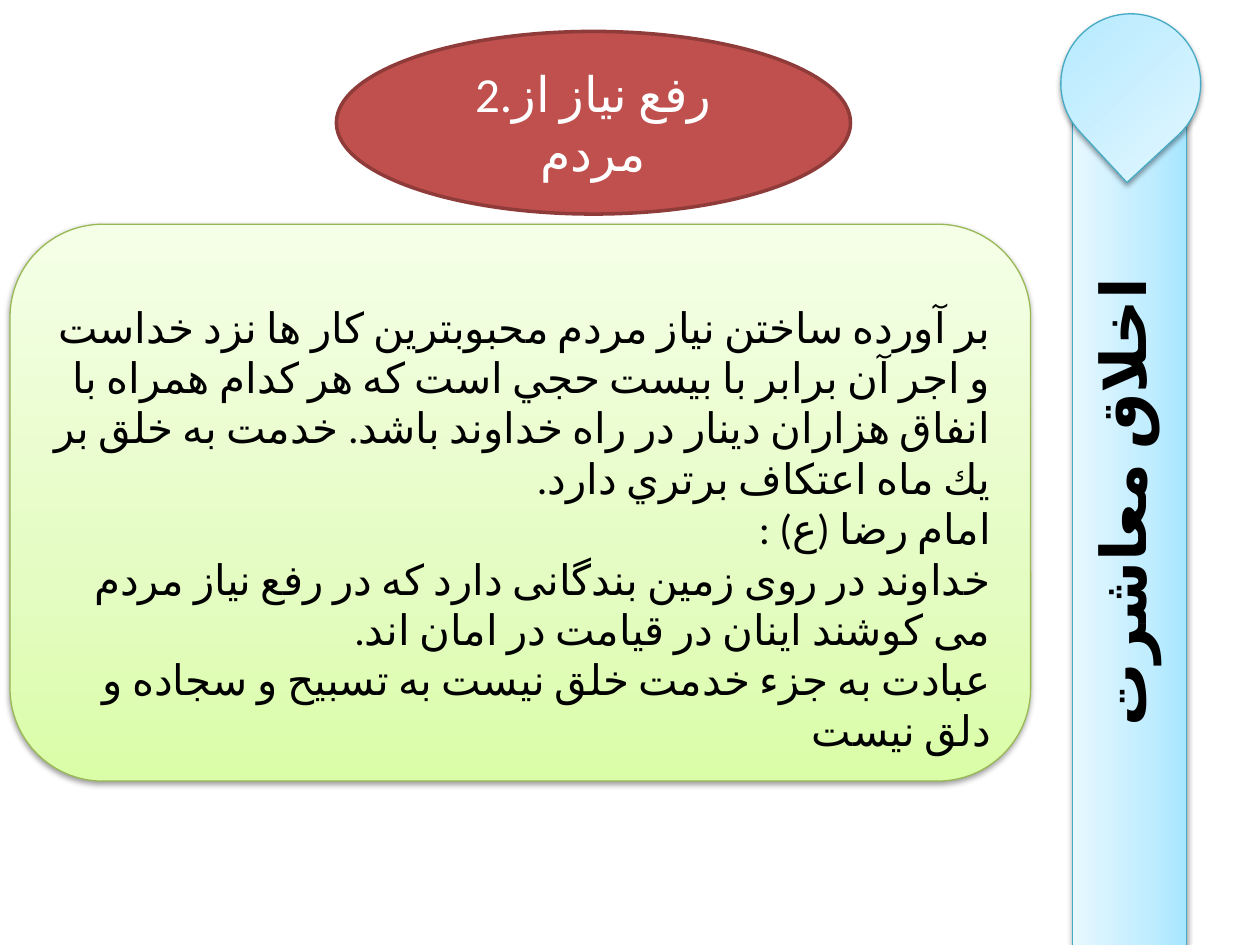
from pptx import Presentation
from pptx.dml.color import RGBColor
from pptx.enum.shapes import MSO_SHAPE
from pptx.enum.text import MSO_ANCHOR, PP_ALIGN
from pptx.oxml import parse_xml
from pptx.oxml.ns import nsdecls, qn
from pptx.util import Inches, Pt

BLACK = RGBColor(0x00, 0x00, 0x00)
WHITE = RGBColor(0xFF, 0xFF, 0xFF)
RED = RGBColor(0xC0, 0x50, 0x4D)
DARK_RED = RGBColor(0x8E, 0x3B, 0x39)
BLUE_LINE = RGBColor(0x46, 0xAA, 0xC5)
GREEN_LINE = RGBColor(0x98, 0xB9, 0x55)
BLUE_STOPS = [(0, RGBColor(0xA7, 0xE6, 0xFF)), (35, RGBColor(0xC1, 0xED, 0xFF)),
              (100, RGBColor(0xE7, 0xF8, 0xFF))]
GREEN_STOPS = [(0, RGBColor(0xDA, 0xFD, 0xA7)), (35, RGBColor(0xE4, 0xFC, 0xC2)),
               (100, RGBColor(0xF5, 0xFF, 0xE7))]

WIDTH, HEIGHT = Inches(10), Inches(7.5)
FONT = "Calibri"
LANGUAGE = "fa-IR"
SIDE_TITLE = "اخلاق معاشرت"
HEADING = "2.رفع نیاز از مردم"
BODY = [
    "بر آورده ساختن نياز مردم محبوبترين كار ها نزد خداست و اجر آن برابر با بيست حجي است كه هر كدام همراه با انفاق هزاران دينار در راه خداوند باشد. خدمت به خلق بر يك ماه اعتكاف برتري دارد.",
    "امام رضا (ع) :",
    "خداوند در روی زمین بندگانی دارد که در رفع نیاز مردم می کوشند اینان در قیامت در امان اند.",
    "عبادت به جزء خدمت خلق نيست به تسبيح و سجاده و دلق نيست",
]


def add_outlined_shape(slide, kind, box, line_color, line_width):
    """Add a preset shape; box is left, top, width, height as shares of the slide."""
    left, top, width, height = box
    shape = slide.shapes.add_shape(kind, round(left * WIDTH), round(top * HEIGHT),
                                   round(width * WIDTH), round(height * HEIGHT))
    shape.shadow.inherit = False
    shape.line.color.rgb = line_color
    shape.line.width = Pt(line_width)
    return shape


def add_glossy_shape(slide, kind, box, stops, line_color):
    """Add a shape with a three-stop gradient rising from its base and a soft shadow."""
    shape = add_outlined_shape(slide, kind, box, line_color, 0.75)
    properties = shape._element.spPr
    stop_xml = "".join(
        f'<a:gs pos="{position * 1000}"><a:srgbClr val="{color}"/></a:gs>'
        for position, color in stops)
    properties.find(qn("a:prstGeom")).addnext(parse_xml(
        f'<a:gradFill {nsdecls("a")} rotWithShape="1"><a:gsLst>{stop_xml}</a:gsLst>'
        '<a:lin ang="16200000" scaled="0"/></a:gradFill>'))
    properties.find(qn("a:effectLst")).append(parse_xml(
        f'<a:outerShdw {nsdecls("a")} blurRad="{Pt(3.15)}" dist="{Pt(1.57)}" '
        'dir="5400000" rotWithShape="0"><a:srgbClr val="000000">'
        '<a:alpha val="38000"/></a:srgbClr></a:outerShdw>'))
    return shape


def set_persian_font(run):
    """Name the font for Latin and for complex script, and mark the language."""
    run.font.name = FONT
    properties = run._r.get_or_add_rPr()
    properties.set("lang", LANGUAGE)
    properties.find(qn("a:latin")).addnext(
        parse_xml(f'<a:cs {nsdecls("a")} typeface="{FONT}"/>'))


def write_text(shape, paragraphs, size, color, alignment=PP_ALIGN.CENTER, bold=False):
    text_frame = shape.text_frame
    text_frame.text = "\n".join(paragraphs)
    text_frame.word_wrap = True
    text_frame.vertical_anchor = MSO_ANCHOR.MIDDLE
    for paragraph in text_frame.paragraphs:
        paragraph.alignment = alignment
        for run in paragraph.runs:
            set_persian_font(run)
            run.font.size = Pt(size)
            run.font.bold = bold
            run.font.color.rgb = color


def add_side_bar(slide):
    bar = add_glossy_shape(slide, MSO_SHAPE.RECTANGLE, (0.545, 0.471, 0.703, 0.121),
                           BLUE_STOPS, BLUE_LINE)
    bar.rotation = 270
    write_text(bar, [SIDE_TITLE], 36, BLACK, bold=True)
    paragraph = bar.text_frame.paragraphs[0]
    paragraph.line_spacing = Pt(34)
    paragraph.space_after = Pt(10)


def add_drop(slide):
    drop = add_glossy_shape(slide, MSO_SHAPE.TEAR, (0.842, 0.0147, 0.111, 0.148),
                            BLUE_STOPS, BLUE_LINE)
    drop.rotation = 317.2
    transform = drop._element.spPr.find(qn("a:xfrm"))
    transform.set("flipH", "1")
    transform.set("flipV", "1")


def add_heading(slide):
    ellipse = add_outlined_shape(slide, MSO_SHAPE.OVAL, (0.267, 0.0333, 0.408, 0.1933),
                                 DARK_RED, 2)
    ellipse.fill.solid()
    ellipse.fill.fore_color.rgb = RED
    write_text(ellipse, [HEADING], 28, WHITE)


def add_body(slide):
    panel = add_glossy_shape(slide, MSO_SHAPE.ROUNDED_RECTANGLE,
                             (0.008, 0.2373, 0.81, 0.5893), GREEN_STOPS, GREEN_LINE)
    write_text(panel, BODY, 24, BLACK, PP_ALIGN.RIGHT)
    panel.text_frame.margin_top = Inches(0.45)
    for paragraph in panel.text_frame.paragraphs:
        paragraph._p.get_or_add_pPr().set("rtl", "1")


def main():
    presentation = Presentation()
    presentation.slide_width, presentation.slide_height = WIDTH, HEIGHT
    slide = presentation.slides.add_slide(presentation.slide_layouts.get_by_name("Blank"))
    add_side_bar(slide)
    add_drop(slide)
    add_heading(slide)
    add_body(slide)
    presentation.save("out.pptx")


if __name__ == "__main__":
    main()
